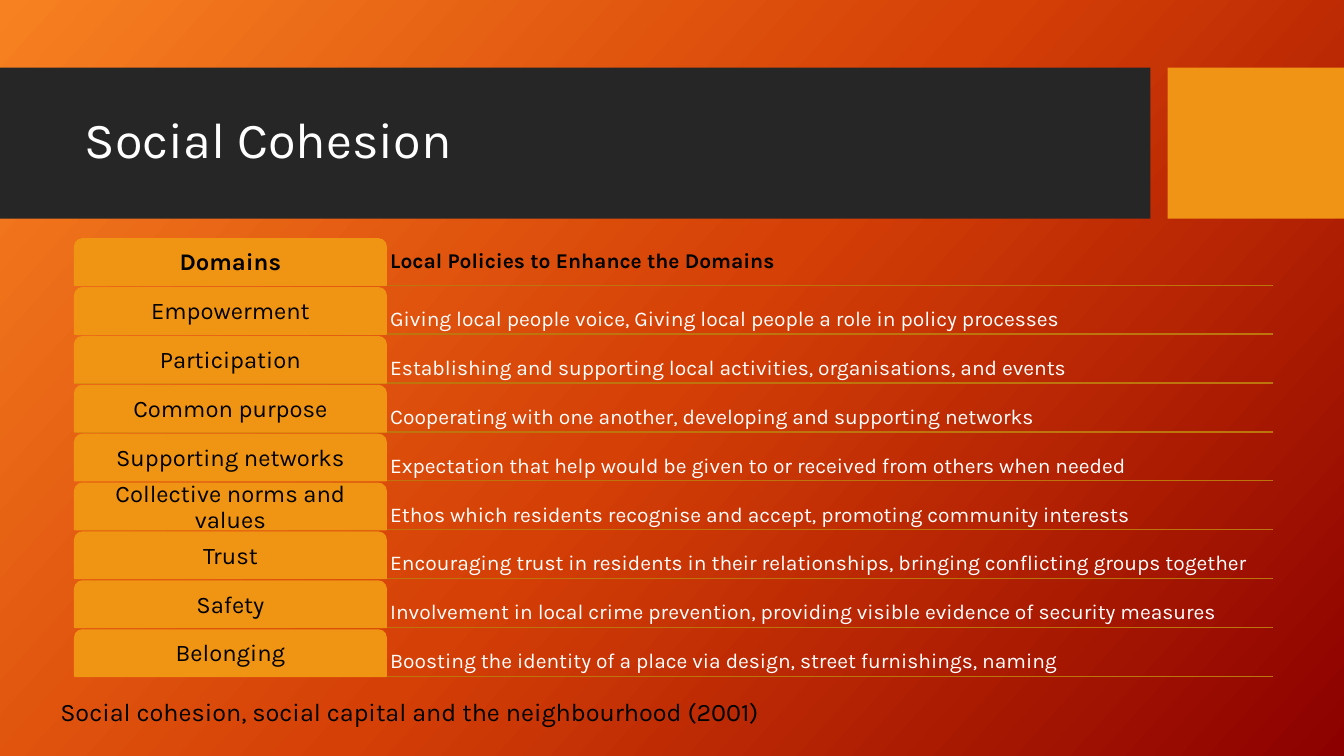
from copy import deepcopy
from dataclasses import dataclass

from pptx import Presentation
from pptx import util as u
from pptx.dml.color import RGBColor
from pptx.enum import shapes, text
from pptx.oxml.ns import qn
from pptx.oxml.xmlchemy import OxmlElement
from pptx.shapes.autoshape import Shape
from pptx.slide import Slide


@dataclass(frozen=True)
class Theme:
    font: str = "Karla"
    dark: str = "262626"
    gold: str = "F09415"
    tab: str = "EF9413"
    rule: str = "BE750D"
    white: str = "FFFFFF"
    black: str = "000000"
    grad: tuple[tuple[float, str], ...] = (
        (0, "F78121"), (0.5, "D54006"), (1, "8C0000"))
    angle: int = 42
    title: int = 36
    note: int = 18
    label: int = 17
    body: int = 15


@dataclass(frozen=True)
class Box:
    left: float
    top: float
    width: float
    height: float

    def emu(self) -> list[u.Length]:
        return [u.Inches(n) for n in (self.left, self.top, self.width, self.height)]


@dataclass(frozen=True)
class Style:
    size: int
    color: str
    bold: bool = False
    space: float = 0.9
    anchor: text.MSO_ANCHOR = text.MSO_ANCHOR.MIDDLE
    align: text.PP_ALIGN = text.PP_ALIGN.LEFT
    inset: tuple[float, float] = (0.1, 0.05)


@dataclass(frozen=True)
class Row:
    domain: str
    policy: str
    head: bool = False


THEME = Theme()
LEFT, TOP, PITCH, HIGH = 0.74, 2.37, 0.485, 0.46
TAB, SPLIT, RIGHT = 3.09, 3.84, 12.63
ROWS = [
    Row("Domains", "Local Policies to Enhance the Domains", True),
    Row("Empowerment", "Giving local people voice, Giving local people a role in policy processes"),
    Row("Participation", "Establishing and supporting local activities, organisations, and events"),
    Row("Common purpose", "Cooperating with one another, developing and supporting networks"),
    Row("Supporting networks", "Expectation that help would be given to or received from others when needed"),
    Row("Collective norms and values", "Ethos which residents recognise and accept, promoting community interests"),
    Row("Trust", "Encouraging trust in residents in their relationships, bringing conflicting groups together"),
    Row("Safety", "Involvement in local crime prevention, providing visible evidence of security measures"),
    Row("Belonging", "Boosting the identity of a place via design, street furnishings, naming"),
]


def rgb(code: str) -> RGBColor:
    return RGBColor.from_string(code)


def write(shape: Shape, words: str, style: Style) -> None:
    frame = shape.text_frame
    frame.word_wrap = True
    frame.vertical_anchor = style.anchor
    side, edge = (u.Inches(n) for n in style.inset)
    frame.margin_left = frame.margin_right = side
    frame.margin_top = frame.margin_bottom = edge
    frame.text = words
    para = frame.paragraphs[0]
    para.alignment = style.align
    para.line_spacing = style.space
    font = para.font
    font.name, font.size, font.bold = THEME.font, u.Pt(style.size), style.bold
    font.color.rgb = rgb(style.color)


def label(slide: Slide, box: Box, words: str, style: Style) -> None:
    write(slide.shapes.add_textbox(*box.emu()), words, style)


def block(slide: Slide, kind: shapes.MSO_SHAPE, box: Box, fill: str) -> Shape:
    shape = slide.shapes.add_shape(kind, *box.emu())
    shape.shadow.inherit = False
    shape.fill.solid()
    shape.fill.fore_color.rgb = rgb(fill)
    shape.line.fill.background()
    return shape


def rule(slide: Slide, y: float) -> None:
    line = slide.shapes.add_connector(
        shapes.MSO_CONNECTOR.STRAIGHT,
        u.Inches(LEFT), u.Inches(y), u.Inches(RIGHT), u.Inches(y))
    line.line.color.rgb = rgb(THEME.rule)
    line.line.width = u.Pt(1)
    line.element.spPr.append(OxmlElement("a:effectLst"))


def paint(slide: Slide) -> None:
    fill = slide.background.fill
    fill.gradient()
    fill.gradient_angle = 360 - THEME.angle
    # A new gradient has two stops; add the third
    stops = slide.element.find(".//" + qn("a:gsLst"))
    stops.append(deepcopy(stops[0]))
    for stop, (place, code) in zip(fill.gradient_stops, THEME.grad):
        stop.position = place
        stop.color.rgb = rgb(code)


def entry(slide: Slide, row: Row, top: float) -> None:
    policy = Style(
        THEME.body, THEME.black if row.head else THEME.white, row.head,
        anchor=text.MSO_ANCHOR.MIDDLE if row.head else text.MSO_ANCHOR.BOTTOM,
        inset=(0.03, 0.03))
    label(slide, Box(SPLIT, top, RIGHT - SPLIT, HIGH), row.policy, policy)

    tab = block(slide, shapes.MSO_SHAPE.ROUND_2_SAME_RECTANGLE,
                Box(LEFT, top, TAB, HIGH), THEME.tab)
    tab.line.color.rgb = rgb(THEME.tab)
    tab.line.width = u.Pt(1)
    write(tab, row.domain, Style(
        THEME.label, THEME.black, row.head,
        align=text.PP_ALIGN.CENTER, inset=(0.04, 0.04)))


def main() -> None:
    deck = Presentation()
    deck.slide_width, deck.slide_height = u.Inches(13.33), u.Inches(7.5)
    slide = deck.slides.add_slide(deck.slide_layouts[6])
    paint(slide)

    # Title band
    rect = shapes.MSO_SHAPE.RECTANGLE
    block(slide, rect, Box(0, 0.67, 11.41, 1.5), THEME.dark)
    block(slide, rect, Box(11.58, 0.67, 1.75, 1.5), THEME.gold)
    label(slide, Box(LEFT, 0.82, 10.51, 1.18), "Social Cohesion",
          Style(THEME.title, THEME.white))

    # Domains and policies, with the rules behind the tabs
    tops = [TOP + PITCH * i for i in range(len(ROWS))]
    for top in tops:
        rule(slide, top + HIGH)
    for row, top in zip(ROWS, tops):
        entry(slide, row, top)

    # Source line
    label(slide, Box(0.5, 6.84, 11.5, 0.4),
          "Social cohesion, social capital and the neighbourhood (2001)",
          Style(THEME.note, THEME.black, space=1.07, anchor=text.MSO_ANCHOR.TOP))

    deck.save("out.pptx")


if __name__ == "__main__":
    main()
